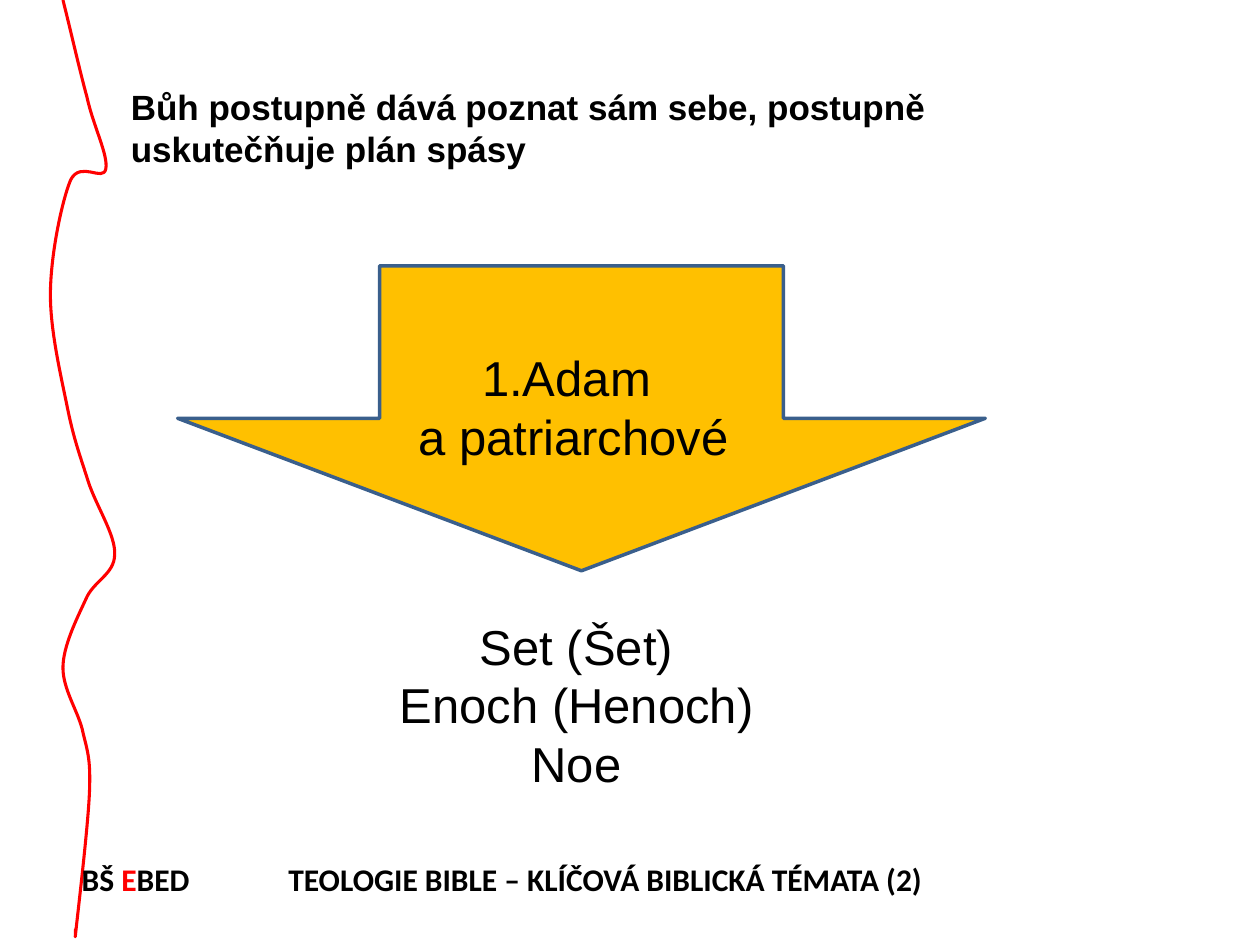
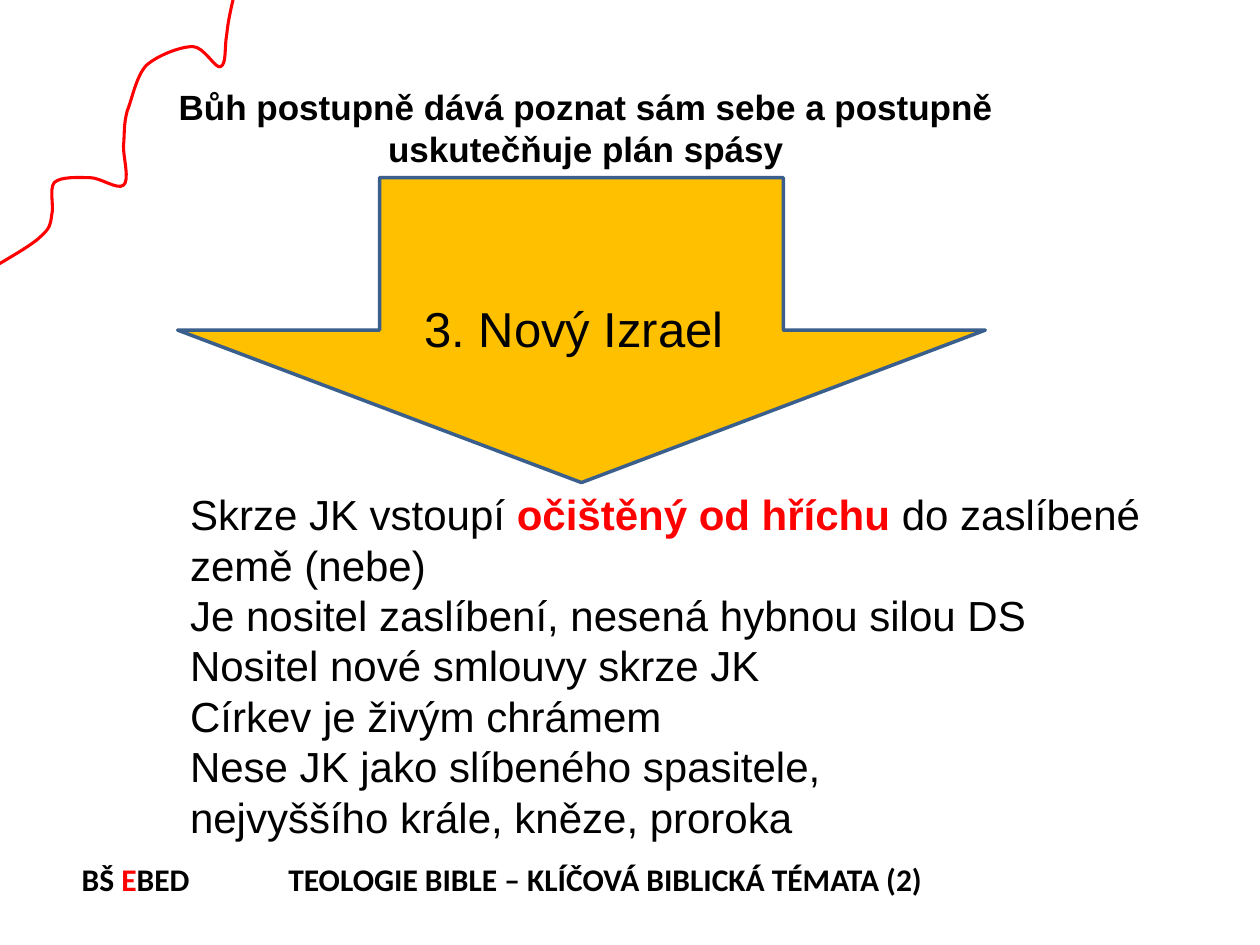
from dataclasses import dataclass

import pptx
import pptx.dml.color
import pptx.enum.shapes
import pptx.enum.text
import pptx.oxml
import pptx.oxml.ns
import pptx.util
from pptx.util import Inches

COLORS = {"text": "000000", "accent": "FF0000", "arrow": "FFC000", "outline": "3A5F8C"}
ALIGN = pptx.enum.text.PP_ALIGN
Point = tuple[float, float]
Curve = tuple[Point, Point, Point]  # two control points and the end point


@dataclass
class Run:
    text: str
    color: str = "text"
    bold: bool = False


@dataclass
class TextBlock:
    box: tuple[float, float, float, float]
    paragraphs: list[list[Run]]
    size: float
    font: str = "Arial"
    align: ALIGN = ALIGN.LEFT
    wrap: bool = True


@dataclass
class RedLine:
    start: Point
    curves: list[Curve]


@dataclass
class SlideContent:
    arrow_top: float
    title: TextBlock
    label: TextBlock
    body: TextBlock
    red_line: RedLine


def rgb(name: str) -> pptx.dml.color.RGBColor:
    return pptx.dml.color.RGBColor.from_string(COLORS[name])


def plain(*lines: str) -> list[list[Run]]:
    return [[Run(line)] for line in lines]


def title(left: float, text: str, align: ALIGN) -> TextBlock:
    return TextBlock((left, 0.63, 8.2, 0.77), [[Run(text, bold=True)]], 20, align=align)


def centered(box: tuple[float, float, float, float], *lines: str) -> TextBlock:
    return TextBlock(box, plain(*lines), 28, align=ALIGN.CENTER, wrap=False)


def add_text(slide, block: TextBlock):
    sp = slide.shapes.add_textbox(*map(Inches, block.box))
    tf = sp.text_frame
    tf.word_wrap = block.wrap
    tf.auto_size = pptx.enum.text.MSO_AUTO_SIZE.SHAPE_TO_FIT_TEXT
    for i, runs in enumerate(block.paragraphs):
        p = tf.add_paragraph() if i else tf.paragraphs[0]
        p.alignment = block.align
        for run in runs:
            r = p.add_run()
            r.text = run.text
            r.font.name = block.font
            r.font.size = pptx.util.Pt(block.size)
            r.font.bold = run.bold
            r.font.color.rgb = rgb(run.color)
    return sp


def add_arrow(slide, top: float) -> None:
    sp = slide.shapes.add_shape(
        pptx.enum.shapes.MSO_SHAPE.DOWN_ARROW,
        Inches(1.41), Inches(top), Inches(6.41), Inches(2.42))
    sp.shadow.inherit = False
    sp.fill.solid()
    sp.fill.fore_color.rgb = rgb("arrow")
    sp.line.color.rgb = rgb("outline")
    sp.line.width = pptx.util.Pt(2)


def add_red_line(slide, line: RedLine) -> None:
    builder = slide.shapes.build_freeform(*map(Inches, line.start))
    builder.add_line_segments(
        [tuple(map(Inches, curve[-1])) for curve in line.curves], close=False)
    sp = builder.convert_to_shape()
    sp.shadow.inherit = False
    sp.fill.background()
    sp.line.color.rgb = rgb("accent")
    sp.line.width = pptx.util.Pt(1.75)

    # Turn each straight segment into a Bézier curve
    segments = list(sp.element.iter(pptx.oxml.ns.qn("a:lnTo")))
    for segment, curve in zip(segments, line.curves):
        points = "".join(
            f'<a:pt x="{Inches(x) - sp.left}" y="{Inches(y) - sp.top}"/>' for x, y in curve)
        bezier = pptx.oxml.parse_xml(
            f'<a:cubicBezTo {pptx.oxml.ns.nsdecls("a")}>{points}</a:cubicBezTo>')
        segment.getparent().replace(segment, bezier)


def add_footer(slide) -> None:
    runs = [Run("BŠ", bold=True), Run(" E", "accent", True),
            Run("BED\tTEOLOGIE BIBLE – KLÍČOVÁ BIBLICKÁ TÉMATA (2)", bold=True)]
    sp = add_text(slide, TextBlock((0.55, 6.78, 7.27, 0.4), [runs], 18, "Calibri"))
    properties = sp.text_frame.paragraphs[0]._p.get_or_add_pPr()
    properties.append(pptx.oxml.parse_xml(
        f'<a:tabLst {pptx.oxml.ns.nsdecls("a")}>'
        f'<a:tab pos="{Inches(1.64)}" algn="l"/></a:tabLst>'))


SLIDES = [
    SlideContent(
        arrow_top=2.11,
        title=title(0.94, "Bůh postupně dává poznat sám sebe, postupně uskutečňuje plán spásy",
                    ALIGN.LEFT),
        label=centered((3.2, 2.71, 2.7, 1.04), "1.Adam ", "a patriarchové"),
        body=centered((3.05, 4.84, 3.05, 1.51), "Set (Šet)", "Enoch (Henoch)", "Noe"),
        red_line=RedLine((0.5, 0), [
            ((0.57, 0.28), (0.63, 0.55), (0.69, 0.77)),
            ((0.74, 1), (0.86, 1.23), (0.84, 1.34)),
            ((0.82, 1.45), (0.64, 1.27), (0.56, 1.43)),
            ((0.49, 1.6), (0.4, 2.03), (0.4, 2.34)),
            ((0.4, 2.64), (0.49, 3.01), (0.54, 3.26)),
            ((0.59, 3.5), (0.64, 3.63), (0.7, 3.82)),
            ((0.76, 4.01), (0.92, 4.25), (0.91, 4.4)),
            ((0.91, 4.56), (0.74, 4.61), (0.68, 4.76)),
            ((0.61, 4.91), (0.5, 5.13), (0.5, 5.3)),
            ((0.5, 5.48), (0.63, 5.66), (0.66, 5.82)),
            ((0.7, 5.98), (0.72, 6.04), (0.71, 6.29)),
            ((0.7, 6.54), (0.63, 7.14), (0.61, 7.32)),
            ((0.59, 7.5), (0.6, 7.43), (0.6, 7.37)),
        ]),
    ),
    SlideContent(
        arrow_top=1.41,
        title=title(0.55, "Bůh postupně dává poznat sám sebe a postupně uskutečňuje plán spásy",
                    ALIGN.CENTER),
        label=centered((3.25, 2.32, 2.61, 0.57), "3. Nový Izrael"),
        body=TextBlock((1.41, 3.83, 8.52, 2.93), [
            [Run("Skrze JK vstoupí "), Run("očištěný od hříchu ", "accent", True),
             Run("do zaslíbené země (nebe)")],
            *plain("Je nositel zaslíbení, nesená hybnou silou DS",
                   "Nositel nové smlouvy skrze JK",
                   "Církev je živým chrámem",
                   "Nese JK jako slíbeného spasitele,",
                   "nejvyššího krále, kněze, proroka"),
        ], 24),
        red_line=RedLine((1.87, -0.09), [
            ((1.84, 0.04), (1.81, 0.16), (1.8, 0.27)),
            ((1.78, 0.37), (1.8, 0.51), (1.75, 0.53)),
            ((1.71, 0.55), (1.62, 0.37), (1.53, 0.37)),
            ((1.43, 0.37), (1.25, 0.44), (1.16, 0.52)),
            ((1.08, 0.61), (1.05, 0.78), (1.01, 0.88)),
            ((0.98, 0.99), (0.99, 1.06), (0.98, 1.16)),
            ((0.98, 1.26), (1.03, 1.43), (0.98, 1.47)),
            ((0.93, 1.51), (0.8, 1.41), (0.71, 1.41)),
            ((0.62, 1.41), (0.48, 1.4), (0.43, 1.45)),
            ((0.39, 1.5), (0.43, 1.64), (0.41, 1.71)),
            ((0.4, 1.78), (0.4, 1.81), (0.32, 1.88)),
            ((0.25, 1.95), (0.03, 2.07), (-0.03, 2.11)),
            ((-0.09, 2.15), (-0.07, 2.13), (-0.05, 2.12)),
        ]),
    ),
]


def main() -> None:
    prs = pptx.Presentation()
    prs.slide_width, prs.slide_height = Inches(10), Inches(7.5)
    for content in SLIDES:
        s = prs.slides.add_slide(prs.slide_layouts[6])
        add_arrow(s, content.arrow_top)
        for block in (content.title, content.label, content.body):
            add_text(s, block)
        add_red_line(s, content.red_line)
        add_footer(s)
    prs.save("out.pptx")


if __name__ == "__main__":
    main()
